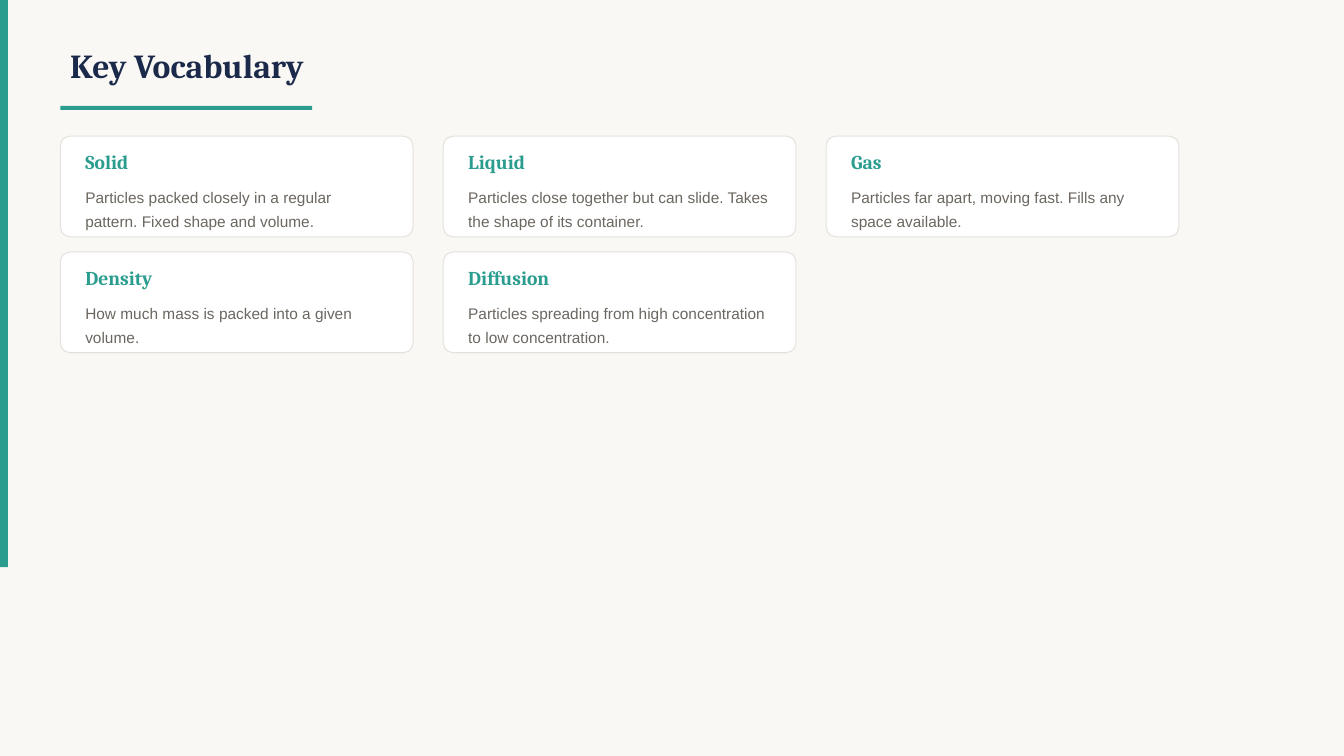
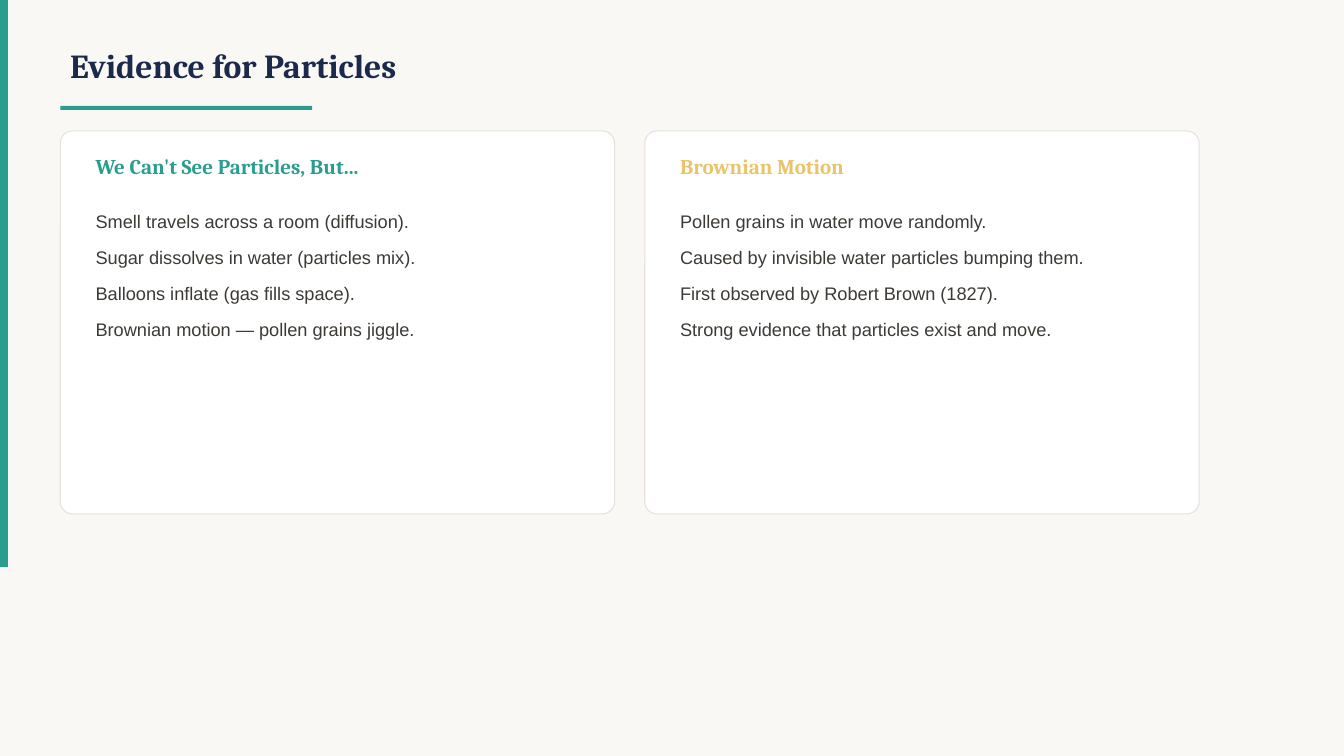
import pptx
import pptx.util
import pptx.dml.color
import pptx.enum.shapes
import pptx.enum.text

Cm = pptx.util.Cm
Pt = pptx.util.Pt
RGBColor = pptx.dml.color.RGBColor
SHAPE = pptx.enum.shapes.MSO_SHAPE
ANCHOR = pptx.enum.text.MSO_ANCHOR

# Content
VOCABULARY_TITLE = "Key Vocabulary"
VOCABULARY = [
    ("Solid", "Particles packed closely in a regular pattern. Fixed shape and volume."),
    ("Liquid", "Particles close together but can slide. Takes the shape of its container."),
    ("Gas", "Particles far apart, moving fast. Fills any space available."),
    ("Density", "How much mass is packed into a given volume."),
    ("Diffusion", "Particles spreading from high concentration to low concentration."),
]

# Colours and fonts
CREAM = RGBColor(0xFA, 0xF8, 0xF5)
TEAL = RGBColor(0x2A, 0x9D, 0x8F)
NAVY = RGBColor(0x1B, 0x2A, 0x4A)
GOLD = RGBColor(0xE9, 0xC4, 0x6A)
WHITE = RGBColor(0xFF, 0xFF, 0xFF)
BORDER = RGBColor(0xE5, 0xE2, 0xDC)
GREY = RGBColor(0x6B, 0x66, 0x60)
CHARCOAL = RGBColor(0x3D, 0x3A, 0x36)
HEAD_FONT, BODY_FONT = "Cambria", "Arial"

EVIDENCE_TITLE = "Evidence for Particles"
EVIDENCE = [
    ("We Can't See Particles, But...", TEAL, [
        "Smell travels across a room (diffusion).",
        "Sugar dissolves in water (particles mix).",
        "Balloons inflate (gas fills space).",
        "Brownian motion — pollen grains jiggle.",
    ]),
    ("Brownian Motion", GOLD, [
        "Pollen grains in water move randomly.",
        "Caused by invisible water particles bumping them.",
        "First observed by Robert Brown (1827).",
        "Strong evidence that particles exist and move.",
    ]),
]

# Layout, in centimetres
LEFT = 1.52
GAP = 0.76
CARD_COLUMNS, CARD_TOP, CARD_W, CARD_H, CARD_ROW_GAP = 3, 3.43, 8.89, 2.54, 0.38
PANEL_TOP, PANEL_W, PANEL_H = 3.3, 13.97, 9.65


def add_box(slide, kind, x, y, w, h, fill, line=None, radius=None):
    sp = slide.shapes.add_shape(kind, Cm(x), Cm(y), Cm(w), Cm(h))
    sp.shadow.inherit = False
    sp.fill.solid()
    sp.fill.fore_color.rgb = fill
    if line is None:
        sp.line.fill.background()
    else:
        sp.line.color.rgb = line
        sp.line.width = Pt(0.75)
    if radius is not None:
        sp.adjustments[0] = radius


def add_text(slide, x, y, w, h, lines, size, color, font=BODY_FONT, bold=None,
             anchor=ANCHOR.MIDDLE, spacing=None, after=None):
    tf = slide.shapes.add_textbox(Cm(x), Cm(y), Cm(w), Cm(h)).text_frame
    tf.word_wrap = True
    tf.vertical_anchor = anchor
    for i, line in enumerate(lines):
        p = tf.add_paragraph() if i else tf.paragraphs[0]
        p.line_spacing = spacing
        p.space_after = after
        r = p.add_run()
        r.text = line
        r.font.name = font
        r.font.size = Pt(size)
        r.font.bold = bold
        r.font.color.rgb = color


def add_heading(slide, x, y, w, h, text, size, color):
    add_text(slide, x, y, w, h, [text], size, color, HEAD_FONT, True)


def add_slide(prs, title):
    """Blank slide with background, side band, title and rule."""
    slide = prs.slides.add_slide(prs.slide_layouts[6])
    slide.background.fill.solid()
    slide.background.fill.fore_color.rgb = CREAM
    add_box(slide, SHAPE.RECTANGLE, 0, 0, 0.2, 14.29, TEAL)
    add_heading(slide, LEFT, 0.76, 25.4, 1.78, title, 24, NAVY)
    add_box(slide, SHAPE.RECTANGLE, LEFT, 2.67, 6.35, 0.1, TEAL)
    return slide


def build_vocabulary(prs):
    slide = add_slide(prs, VOCABULARY_TITLE)
    for i, (term, meaning) in enumerate(VOCABULARY):
        row, column = divmod(i, CARD_COLUMNS)
        x = LEFT + column * (CARD_W + GAP)
        y = CARD_TOP + row * (CARD_H + CARD_ROW_GAP)
        add_box(slide, SHAPE.ROUNDED_RECTANGLE, x, y, CARD_W, CARD_H, WHITE, BORDER, 0.1)
        inset = 0.38
        text_w = CARD_W - 2 * inset
        add_heading(slide, x + inset, y + 0.2, text_w, 0.89, term, 14, TEAL)
        add_text(slide, x + inset, y + 1.14, text_w, 1.27, [meaning], 11, GREY, spacing=1.3)


def build_evidence(prs):
    slide = add_slide(prs, EVIDENCE_TITLE)
    for i, (heading, color, points) in enumerate(EVIDENCE):
        x = LEFT + i * (PANEL_W + GAP)
        add_box(slide, SHAPE.ROUNDED_RECTANGLE, x, PANEL_TOP, PANEL_W, PANEL_H,
                WHITE, BORDER, 0.032)
        inset = 0.64
        text_w = PANEL_W - 2 * inset
        add_heading(slide, x + inset, PANEL_TOP + 0.38, text_w, 1.02, heading, 15, color)
        add_text(slide, x + inset, PANEL_TOP + 1.65, text_w, 7.37, points, 13, CHARCOAL,
                 anchor=ANCHOR.TOP, spacing=1.4, after=Pt(4))


def main():
    prs = pptx.Presentation()
    prs.slide_width, prs.slide_height = Cm(33.87), Cm(19.05)
    build_vocabulary(prs)
    build_evidence(prs)
    prs.save("out.pptx")


if __name__ == "__main__":
    main()
